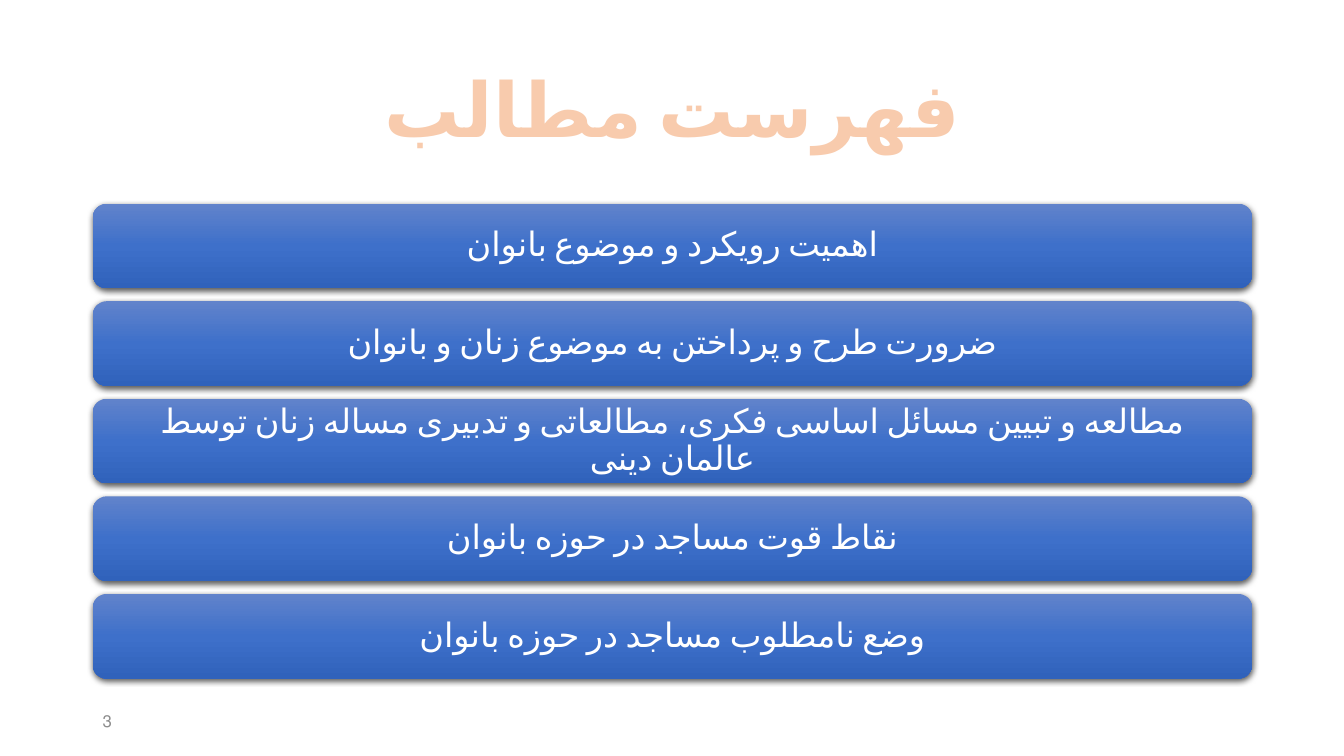
from copy import deepcopy
from dataclasses import dataclass

from lxml.etree import SubElement
from pptx import Presentation
from pptx.dml.color import RGBColor
from pptx.enum.shapes import MSO_SHAPE
from pptx.enum.text import MSO_ANCHOR, PP_ALIGN
from pptx.oxml import parse_xml
from pptx.oxml.ns import nsdecls, qn
from pptx.slide import Slide
from pptx.text.text import TextFrame
from pptx.util import Inches, Pt

COLORS = {
    "title": "F8CBAD",
    "outline": "ED7D31",
    "top": "6183CB",
    "middle": "3E70CA",
    "bottom": "3062BB",
    "shadow": "000000",
    "topic": "FFFFFF",
    "number": "8C8C8C",
}
FONT = "Calibri"
LEFT, WIDTH = 0.92, 11.5
FIRST_TOP, PITCH, BAR_HEIGHT = 2.02, 0.968, 0.84


@dataclass(frozen=True)
class Topic:
    """One entry of the contents list and its row."""

    row: int
    wording: str


TOPICS = [
    Topic(0, "اهمیت رویکرد و موضوع بانوان"),
    Topic(1, "ضرورت طرح و پرداختن به موضوع زنان و بانوان"),
    Topic(2, "مطالعه و تبیین مسائل اساسی فکری، مطالعاتی و تدبیری مساله زنان توسط عالمان دینی"),
    Topic(3, "نقاط قوت مساجد در حوزه بانوان"),
    Topic(4, "وضع نامطلوب مساجد در حوزه بانوان"),
]


def write(frame: TextFrame, wording: str, size: float, color: str,
          align: PP_ALIGN = PP_ALIGN.CENTER, spacing: float = 0.9) -> None:
    """Set one right-to-left paragraph, vertically centred."""
    frame.text = wording
    frame.word_wrap = True
    frame.vertical_anchor = MSO_ANCHOR.MIDDLE
    paragraph = frame.paragraphs[0]
    paragraph.alignment = align
    paragraph.line_spacing = spacing
    paragraph._p.get_or_add_pPr().set("rtl", "1")
    font = paragraph.runs[0].font
    font.name = FONT
    font.size = Pt(size)
    font.color.rgb = RGBColor.from_string(COLORS[color])


def use_persian_script(frame: TextFrame) -> None:
    """Give the Persian letters their font and language."""
    properties = frame.paragraphs[0].runs[0]._r.get_or_add_rPr()
    properties.set("lang", "fa-IR")
    SubElement(properties, qn("a:cs"), typeface=FONT)


def add_heading(slide: Slide, wording: str) -> None:
    """Place the bold, outlined slide title."""
    heading = slide.shapes.title
    heading.left, heading.top = Inches(LEFT), Inches(0.4)
    heading.width, heading.height = Inches(WIDTH), Inches(1.45)
    write(heading.text_frame, wording, 54, "title")
    use_persian_script(heading.text_frame)
    run = heading.text_frame.paragraphs[0].runs[0]
    run.font.bold = True
    run._r.get_or_add_rPr().insert(0, parse_xml(
        f'<a:ln {nsdecls("a")} w="{Pt(1.75)}"><a:solidFill>'
        f'<a:srgbClr val="{COLORS["outline"]}"/></a:solidFill></a:ln>'))


def add_topic(slide: Slide, topic: Topic) -> None:
    """Draw a shaded bar holding one topic."""
    bar = slide.shapes.add_shape(
        MSO_SHAPE.ROUNDED_RECTANGLE, Inches(LEFT), Inches(FIRST_TOP + topic.row * PITCH),
        Inches(WIDTH), Inches(BAR_HEIGHT))
    bar.line.fill.background()
    bar.fill.gradient()
    bar.fill.gradient_angle = 270
    stop_list = bar._element.spPr.find(qn("a:gradFill")).find(qn("a:gsLst"))
    stop_list.append(deepcopy(stop_list[-1]))
    for stop, shade, position in zip(
            bar.fill.gradient_stops, ("top", "middle", "bottom"), (0, 0.5, 1)):
        stop.color.rgb = RGBColor.from_string(COLORS[shade])
        stop.position = position

    bar.shadow.inherit = False
    effects = bar._element.spPr.find(qn("a:effectLst"))
    shadow = SubElement(effects, qn("a:outerShdw"), blurRad=str(Pt(4.5)),
                        dist=str(Pt(1.5)), dir="5400000", algn="ctr", rotWithShape="0")
    tint = SubElement(shadow, qn("a:srgbClr"), val=COLORS["shadow"])
    SubElement(tint, qn("a:alpha"), val="63000")

    frame = bar.text_frame
    frame.margin_left = frame.margin_right = Inches(0.14)
    frame.margin_top = frame.margin_bottom = Inches(0.1)
    write(frame, topic.wording, 24, "topic")
    use_persian_script(frame)
    frame.paragraphs[0].space_after = Pt(8.4)


def main() -> None:
    """Build the contents slide and save it."""
    deck = Presentation()
    deck.slide_width, deck.slide_height = Inches(13.33), Inches(7.5)
    slide = deck.slides.add_slide(deck.slide_layouts[5])
    add_heading(slide, "فهرست مطالب")
    for topic in TOPICS:
        add_topic(slide, topic)
    page_number = slide.shapes.add_textbox(
        Inches(LEFT), Inches(6.95), Inches(3), Inches(0.4))
    write(page_number.text_frame, "3", 12, "number", PP_ALIGN.LEFT, 1.0)
    deck.save("out.pptx")


if __name__ == "__main__":
    main()
